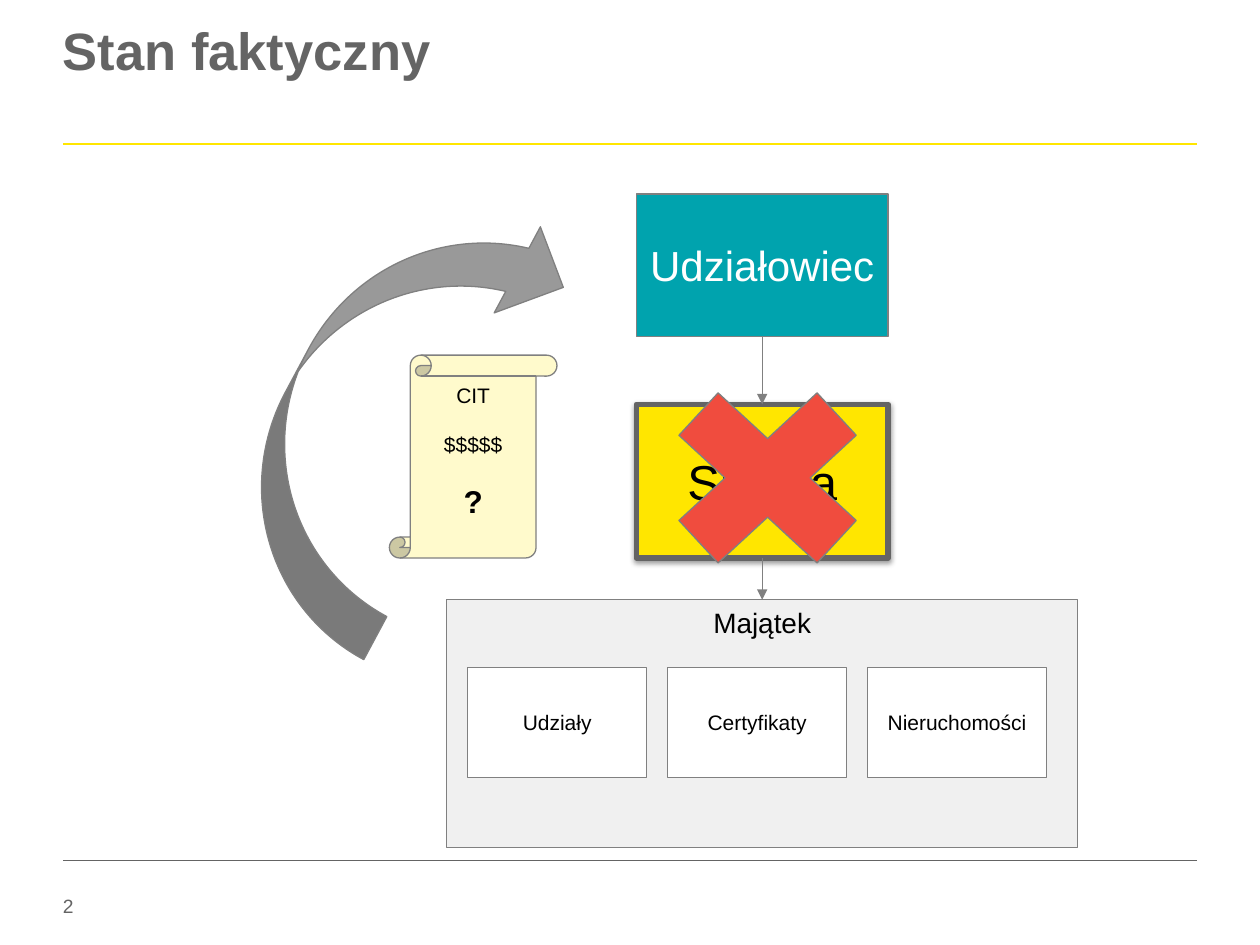
"""Builds a slide on the factual state: shareholder, company and its assets."""
from lxml import etree
from pptx import Presentation
from pptx.dml.color import RGBColor
from pptx.enum.shapes import MSO_CONNECTOR, MSO_SHAPE
from pptx.enum.text import MSO_ANCHOR, PP_ALIGN
from pptx.oxml.ns import qn
from pptx.util import Cm, Pt

STRAIGHT = MSO_CONNECTOR.STRAIGHT
RECTANGLE = MSO_SHAPE.RECTANGLE
CROSS = MSO_SHAPE.MATH_MULTIPLY
CURVED_ARROW = MSO_SHAPE.CURVED_LEFT_ARROW
SCROLL = MSO_SHAPE.VERTICAL_SCROLL
TOP, MIDDLE = MSO_ANCHOR.TOP, MSO_ANCHOR.MIDDLE
CENTER = PP_ALIGN.CENTER
FONT = "Arial"
COLORS = {
    "text": "646464", "outline": "808080", "black": "000000", "white": "FFFFFF",
    "yellow": "FFE600", "teal": "00A3AE", "panel": "F0F0F0", "red": "F04C3E",
    "arrow": "999999", "paper": "FFFACC",
}


def rgb(name):
    """Return the named colour."""
    return RGBColor.from_string(COLORS[name])


def style_font(paragraph, size, color, bold=False):
    """Format every run of a paragraph."""
    for run in paragraph.runs:
        run.font.name = FONT
        run.font.size = Pt(size)
        run.font.bold = bold
        run.font.color.rgb = rgb(color)


def add_label(slide, box, text, size, bold=False):
    """Add a text box without margins and return its paragraph."""
    frame = slide.shapes.add_textbox(*map(Cm, box)).text_frame
    frame.word_wrap = True
    frame.margin_left = frame.margin_right = frame.margin_top = frame.margin_bottom = 0
    frame.text = text
    style_font(frame.paragraphs[0], size, "text", bold)
    return frame.paragraphs[0]


def add_figure(shapes, kind, box, fill, outline="outline", weight=0.75):
    """Add a filled, outlined shape without shadow."""
    figure = shapes.add_shape(kind, *map(Cm, box))
    figure.shadow.inherit = False
    figure.fill.solid()
    figure.fill.fore_color.rgb = rgb(fill)
    figure.line.color.rgb = rgb(outline)
    figure.line.width = Pt(weight)
    return figure


def write_centered(figure, text, size, color="black", anchor=MIDDLE):
    """Write centred text into a shape."""
    frame = figure.text_frame
    frame.word_wrap = True
    frame.margin_left = frame.margin_right = Cm(0.2)
    frame.vertical_anchor = anchor
    frame.text = text
    for paragraph in frame.paragraphs:
        paragraph.alignment = CENTER
        style_font(paragraph, size, color)


def add_line(slide, start, end, color, weight, arrow=False):
    """Add a straight line, with an arrowhead at its end on request."""
    line = slide.shapes.add_connector(STRAIGHT, *map(Cm, start + end))
    line.line.color.rgb = rgb(color)
    line.line.width = Pt(weight)
    if arrow:
        etree.SubElement(line.line._get_or_add_ln(), qn("a:tailEnd"), type="triangle")
    etree.SubElement(line._element.spPr, qn("a:effectLst"))


def add_soft_shadow(figure):
    """Give a shape a soft shadow below it."""
    effects = figure._element.spPr.find(qn("a:effectLst"))
    shadow = etree.SubElement(effects, qn("a:outerShdw"), blurRad=str(Pt(3.1)),
                              dist=str(Pt(1.6)), dir="5400000", rotWithShape="0")
    color = etree.SubElement(shadow, qn("a:srgbClr"), val=COLORS["black"])
    etree.SubElement(color, qn("a:alpha"), val="38000")


def add_page_frame(slide, box):
    """Add the title, the two rules and the page number."""
    left, top, width, height = box
    right = left + width
    add_line(slide, (left, top + 2.34), (right, top + 2.34), "yellow", 1.5)
    add_line(slide, (left, top + 16.79), (right, top + 16.79), "text", 0.25)
    add_label(slide, (left, top + height - 0.56, 2, 0.56), "2", 11)
    title = add_label(slide, (left, top, width, 2.39), "Stan faktyczny", 30, bold=True)
    title.line_spacing = 0.85


def add_assets(slide, box):
    """Add the asset panel with its row of asset boxes."""
    left, top = box[:2]
    group = slide.shapes.add_group_shape()
    panel = add_figure(group.shapes, RECTANGLE, box, "panel")
    write_centered(panel, "Majątek", 16, anchor=TOP)
    for index, asset in enumerate(("Udziały", "Certyfikaty", "Nieruchomości")):
        cell = (left + 0.43 + index * 4.03, top + 1.37, 3.61, 2.21)
        write_centered(add_figure(group.shapes, RECTANGLE, cell, "white"), asset, 12)


def add_ownership(slide, box):
    """Add the chain from shareholder through the crossed-out company to assets."""
    left, top, width, height = box
    middle = left + width / 2
    owner_height, company_top, company_height, assets_top = 2.87, 4.24, 3.1, 8.18
    company = add_figure(slide.shapes, RECTANGLE,
                         (middle - 2.54, top + company_top, 5.08, company_height),
                         "yellow", "text", 3)
    add_soft_shadow(company)
    write_centered(company, "Spółka", 28)
    owner = add_figure(slide.shapes, RECTANGLE,
                       (middle - 2.54, top, 5.08, owner_height), "teal")
    write_centered(owner, "Udziałowiec", 24, "white")
    add_assets(slide, (left, top + assets_top, width, height - assets_top))
    for start, end in ((owner_height, company_top),
                       (company_top + company_height, assets_top)):
        add_line(slide, (middle, top + start), (middle, top + end), "outline", 0.75, True)
    add_figure(slide.shapes, CROSS, (middle - 2.57, top + 3.25, 5.36, 4.95), "red")


def add_tax_question(slide, box):
    """Add the curved arrow and the scroll asking about the tax."""
    left, top, width, height = box
    arrow = add_figure(slide.shapes, CURVED_ARROW, (left, top, 3.94, height), "arrow")
    arrow.rotation = 208.2
    scroll = add_figure(slide.shapes, SCROLL,
                        (left + width - 3.38, top + 3.73, 3.38, 4.09), "paper")
    write_centered(scroll, "CIT\n$$$$$\n?", 12, anchor=TOP)
    amount, question = scroll.text_frame.paragraphs[1:]
    amount.space_before = question.space_before = Pt(14)
    style_font(question, 18, "black", bold=True)


def main():
    """Build and save the presentation."""
    deck = Presentation()
    deck.slide_width, deck.slide_height = Cm(25.4), Cm(19.05)
    slide = deck.slides.add_slide(deck.slide_layouts[6])
    add_page_frame(slide, (1.27, 0.56, 22.86, 18.03))
    add_ownership(slide, (9, 3.91, 12.73, 13.18))
    add_tax_question(slide, (5.87, 3.43, 5.36, 9.5))
    deck.save("out.pptx")


if __name__ == "__main__":
    main()
